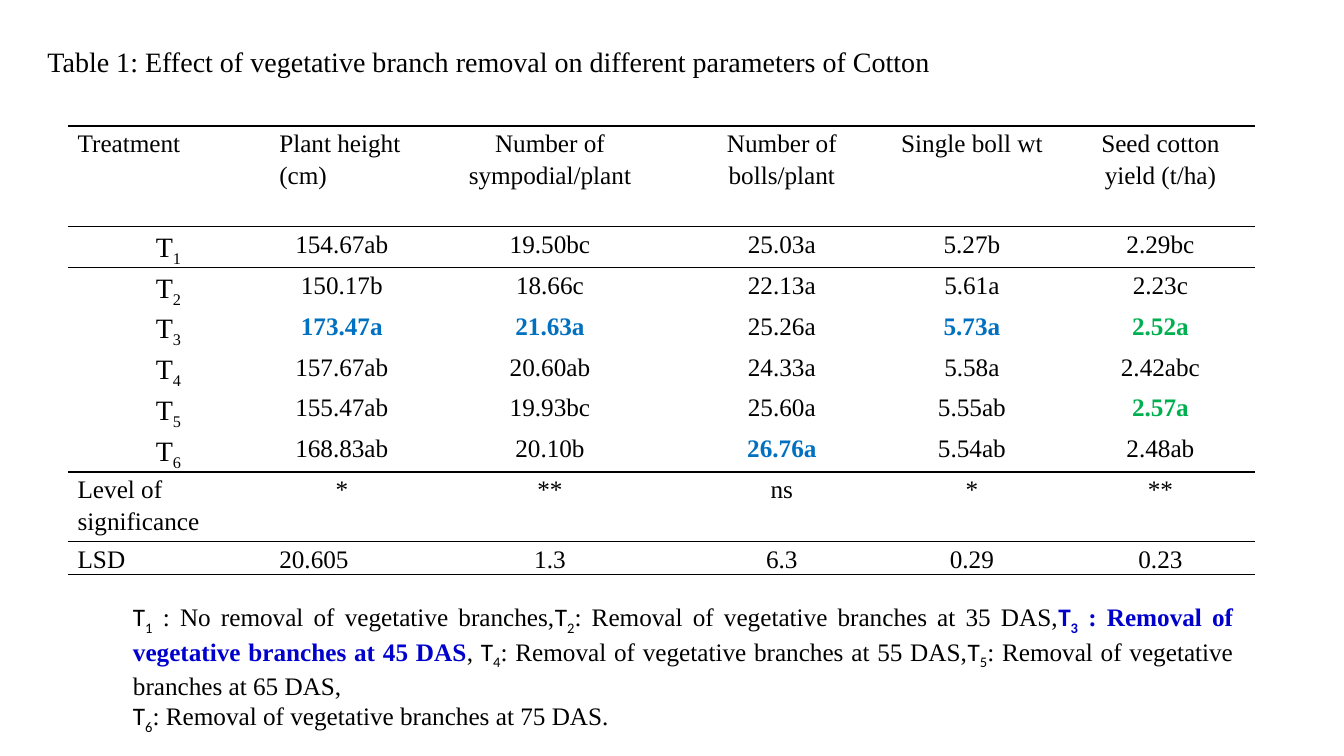
import dataclasses

import lxml.etree
import pptx
import pptx.dml.color
import pptx.enum.text
import pptx.oxml.ns
import pptx.util

Inches = pptx.util.Inches
ALIGN = pptx.enum.text.PP_ALIGN
ANCHOR = pptx.enum.text.MSO_ANCHOR
AUTO_SIZE = pptx.enum.text.MSO_AUTO_SIZE


@dataclasses.dataclass(frozen=True)
class Theme:
    """Colours, fonts and sizes of the slide."""
    text: str = "000000"
    best: str = "0070C0"
    best_yield: str = "00B050"
    key: str = "0000CC"
    serif: str = "Times New Roman"
    sans: str = "Calibri"
    large: int = 20
    normal: int = 18
    rule: int = 1


THEME = Theme()
NO_STYLE = "{2D5ABB26-0587-4C30-8999-92F81FD0307C}"
TITLE = "Table 1: Effect of vegetative branch removal on different parameters of Cotton"
ROWS = [
    ["Treatment", "Plant height (cm)", "Number of sympodial/plant",
     "Number of bolls/plant", "Single boll wt", "Seed cotton yield (t/ha)"],
    ["T1", "154.67ab", "19.50bc", "25.03a", "5.27b", "2.29bc"],
    ["T2", "150.17b", "18.66c", "22.13a", "5.61a", "2.23c"],
    ["T3", "173.47a", "21.63a", "25.26a", "5.73a", "2.52a"],
    ["T4", "157.67ab", "20.60ab", "24.33a", "5.58a", "2.42abc"],
    ["T5", "155.47ab", "19.93bc", "25.60a", "5.55ab", "2.57a"],
    ["T6", "168.83ab", "20.10b", "26.76a", "5.54ab", "2.48ab"],
    ["Level of significance", "*", "**", "ns", "*", "**"],
    ["LSD", "20.605", "1.3", "6.3", "0.29", "0.23"],
]
COL_WIDTHS = [2, 1.44, 2.69, 1.91, 1.86, 1.88]
ROW_HEIGHTS = [1] + [0.33] * 6 + [0.69, 0.33]
HIGHLIGHTS = {
    (3, 1): THEME.best, (3, 2): THEME.best, (3, 4): THEME.best, (6, 3): THEME.best,
    (3, 5): THEME.best_yield, (5, 5): THEME.best_yield,
}
LEFT_CELLS = {(0, 0), (0, 1), (7, 0), (8, 0), (8, 1)}
RULED_TOP = {0, 1, 7, 8}
RULED_BOTTOM = {0, 6, 7, 8}
LEGEND = [
    [("1", " : No removal of vegetative branches", ","),
     ("2", ": Removal of vegetative branches at 35 DAS", ","),
     ("3", " : Removal of vegetative branches at 45 DAS", ", "),
     ("4", ": Removal of vegetative branches at 55 DAS", ","),
     ("5", ": Removal of vegetative branches at 65 DAS", ",")],
    [("6", ": Removal of vegetative branches at 75 DAS", ".")],
]
KEY_TREATMENT = "3"


def add_text(p, text, size=THEME.normal, font=THEME.serif, color=THEME.text,
             bold=False, subscript=False):
    """Add a formatted run to a paragraph."""
    r = p.add_run()
    r.text = text
    r.font.size = pptx.util.Pt(size)
    r.font.name = font
    r.font.bold = bold
    r.font.color.rgb = pptx.dml.color.RGBColor.from_string(color)
    if subscript:
        r._r.get_or_add_rPr().set("baseline", "-25000")


def add_treatment(p, number, **fmt):
    """Add a treatment label with its number as a subscript."""
    add_text(p, "T", **fmt)
    add_text(p, number, subscript=True, **fmt)


def add_rule(cell, side):
    """Draw a border on one side of a cell: lnT or lnB."""
    qn = pptx.oxml.ns.qn
    ln = lxml.etree.SubElement(cell._tc.get_or_add_tcPr(), qn(f"a:{side}"),
                               w=str(pptx.util.Pt(THEME.rule)))
    fill = lxml.etree.SubElement(ln, qn("a:solidFill"))
    lxml.etree.SubElement(fill, qn("a:srgbClr"), val=THEME.text)


def fill_cell(cell, row, col, text):
    """Write and format one table cell."""
    cell.margin_left = cell.margin_right = Inches(0.1)
    cell.margin_top = cell.margin_bottom = 0
    if row in RULED_TOP:
        add_rule(cell, "lnT")
    if row in RULED_BOTTOM:
        add_rule(cell, "lnB")
    cell.fill.background()
    p = cell.text_frame.paragraphs[0]
    p.line_spacing = 1.15
    p.alignment = ALIGN.LEFT if (row, col) in LEFT_CELLS else ALIGN.CENTER
    if col == 0 and 1 <= row <= 6:
        add_treatment(p, text[1:], size=THEME.large)
    else:
        add_text(p, text, color=HIGHLIGHTS.get((row, col), THEME.text),
                 bold=(row, col) in HIGHLIGHTS)


def add_results(s):
    """Add the table of treatment results."""
    frame = s.shapes.add_table(len(ROWS), len(COL_WIDTHS), Inches(0.67), Inches(1.25),
                               Inches(sum(COL_WIDTHS)), Inches(sum(ROW_HEIGHTS)))
    table = frame.table
    table.first_row = table.horz_banding = False
    table._tbl.tblPr.find(pptx.oxml.ns.qn("a:tableStyleId")).text = NO_STYLE
    for column, width in zip(table.columns, COL_WIDTHS):
        column.width = Inches(width)
    for line, height in zip(table.rows, ROW_HEIGHTS):
        line.height = Inches(height)
    for row, values in enumerate(ROWS):
        for col, text in enumerate(values):
            fill_cell(table.cell(row, col), row, col, text)


def add_title(s):
    """Place and format the title placeholder."""
    sp = s.shapes.title
    sp.left, sp.top, sp.width, sp.height = (
        Inches(0.37), Inches(0.04), Inches(12.63), Inches(1.14))
    tf = sp.text_frame
    tf.vertical_anchor = ANCHOR.MIDDLE
    p = tf.paragraphs[0]
    p.alignment = ALIGN.LEFT
    add_text(p, TITLE, size=THEME.large)


def add_legend(s):
    """Add the key to the treatments."""
    sp = s.shapes.add_textbox(Inches(1.22), Inches(5.92), Inches(11.11), Inches(1.31))
    tf = sp.text_frame
    tf.word_wrap = True
    tf.auto_size = AUTO_SIZE.SHAPE_TO_FIT_TEXT
    for i, entries in enumerate(LEGEND):
        p = tf.add_paragraph() if i else tf.paragraphs[0]
        p.alignment = ALIGN.JUSTIFY
        for number, text, separator in entries:
            key = number == KEY_TREATMENT
            fmt = {"color": THEME.key if key else THEME.text, "bold": key}
            add_treatment(p, number, font=THEME.sans, **fmt)
            add_text(p, text, **fmt)
            add_text(p, separator)


def main():
    """Build the slide and save it."""
    prs = pptx.Presentation()
    prs.slide_width, prs.slide_height = Inches(13.33), Inches(7.5)
    s = prs.slides.add_slide(prs.slide_layouts[5])
    add_results(s)
    add_title(s)
    add_legend(s)
    prs.save("out.pptx")


if __name__ == "__main__":
    main()
